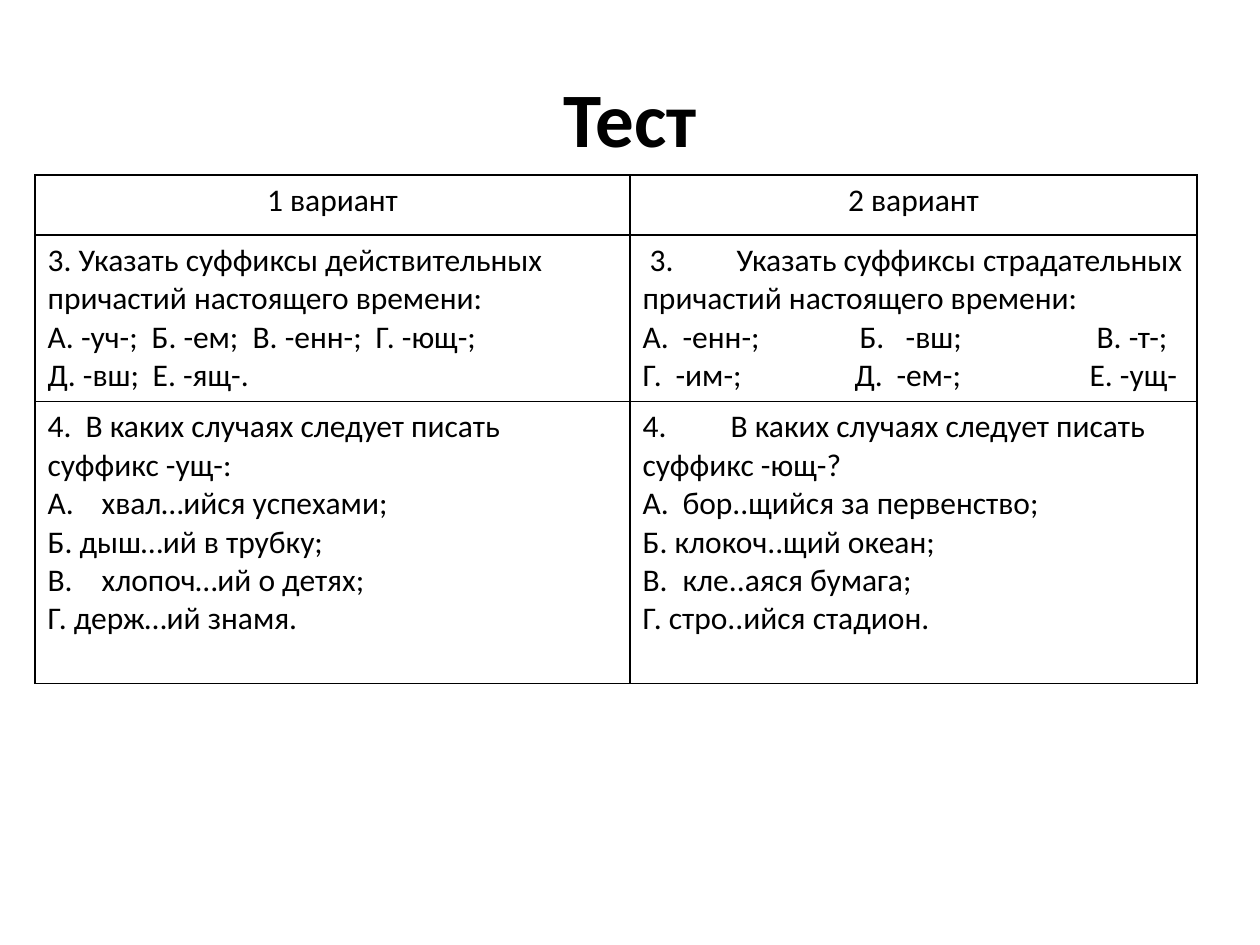
from lxml import etree
from pptx import Presentation
from pptx.dml.color import RGBColor
from pptx.enum.text import MSO_ANCHOR, PP_ALIGN
from pptx.oxml.ns import qn
from pptx.util import Pt

PX = 914400 // 126
BLACK = RGBColor(0, 0, 0)
FONT = "Calibri"
CENTER, LEFT = PP_ALIGN.CENTER, PP_ALIGN.LEFT
MIDDLE = MSO_ANCHOR.MIDDLE
TITLE_ONLY = 5

COLUMN_WIDTHS = [595, 567]
ROW_HEIGHTS = [60, 166, 282]

# Each line is its text followed by its tab stops in px.
HEADINGS = [[("1 вариант",)], [("2 вариант",)]]
QUESTION_3 = [
    [
        ("3. Указать суффиксы действительных причастий настоящего времени:",),
        ("А. -уч-;\tБ. -ем;\tВ. -енн-;\tГ. -ющ-;", 104, 205, 328),
        ("Д. -вш;\tЕ. -ящ-.", 105),
    ],
    [
        (" 3.\tУказать суффиксы страдательных причастий настоящего времени:", 94),
        ("А.\t-енн-;\tБ.\t-вш;\tВ. -т-;", 40, 217, 263, 454),
        ("Г.\t-им-;\tД.\t-ем-;\tЕ. -ущ-", 33, 212, 254, 447),
    ],
]
QUESTION_4 = [
    [
        ("4.\tВ каких случаях следует писать суффикс -ущ-:", 38),
        ("A.\tхвал…ийся успехами;", 54),
        ("Б. дыш…ий в трубку;",),
        ("B.\tхлопоч…ий о детях;", 54),
        ("Г. держ…ий знамя.",),
    ],
    [
        ("4.\tВ каких случаях следует писать суффикс -ющ-?", 88),
        ("A.\tбор..щийся за первенство;", 40),
        ("Б. клокоч..щий океан;",),
        ("B.\tкле..аяся бумага;", 40),
        ("Г. стро..ийся стадион.",),
    ],
]


def style_paragraph(paragraph, size, alignment, bold=False):
    paragraph.alignment = alignment
    font = paragraph.font
    font.name, font.size, font.bold = FONT, Pt(size), bold
    font.color.rgb = BLACK


def set_tab_stops(paragraph, stops):
    tab_list = etree.SubElement(paragraph._p.get_or_add_pPr(), qn("a:tabLst"))
    for stop in stops:
        etree.SubElement(tab_list, qn("a:tab"), pos=str(stop * PX), algn="l")


def set_borders(cell):
    properties = cell._tc.get_or_add_tcPr()
    for side in ("a:lnL", "a:lnR", "a:lnT", "a:lnB"):
        line = etree.SubElement(properties, qn(side), w=str(Pt(1)))
        fill = etree.SubElement(line, qn("a:solidFill"))
        etree.SubElement(fill, qn("a:srgbClr"), val=str(BLACK))


def fill_cell(cell, lines, alignment):
    set_borders(cell)
    cell.fill.background()
    frame = cell.text_frame
    for index, (text, *stops) in enumerate(lines):
        paragraph = frame.add_paragraph() if index else frame.paragraphs[0]
        paragraph.text = text
        if stops:
            set_tab_stops(paragraph, stops)
        style_paragraph(paragraph, 18, alignment)


def add_title(slide, text):
    title = slide.shapes.title
    title.left, title.top, title.width, title.height = (
        value * PX for value in (63, 38, 1134, 157))
    title.text_frame.text = text
    title.text_frame.vertical_anchor = MIDDLE
    style_paragraph(title.text_frame.paragraphs[0], 44, CENTER, bold=True)


def add_test_table(slide, rows):
    table = slide.shapes.add_table(
        len(rows), len(COLUMN_WIDTHS), 35 * PX, 175 * PX,
        sum(COLUMN_WIDTHS) * PX, sum(ROW_HEIGHTS) * PX).table
    table.first_row = table.horz_banding = False
    for column, width in zip(table.columns, COLUMN_WIDTHS):
        column.width = width * PX
    for row_index, (height, row) in enumerate(zip(ROW_HEIGHTS, rows)):
        table.rows[row_index].height = height * PX
        for column_index, lines in enumerate(row):
            fill_cell(table.cell(row_index, column_index), lines,
                      LEFT if row_index else CENTER)


def main():
    presentation = Presentation()
    presentation.slide_width, presentation.slide_height = 1260 * PX, 945 * PX
    slide = presentation.slides.add_slide(presentation.slide_layouts[TITLE_ONLY])
    add_title(slide, "Тест")
    add_test_table(slide, [HEADINGS, QUESTION_3, QUESTION_4])
    presentation.save("out.pptx")


if __name__ == "__main__":
    main()
